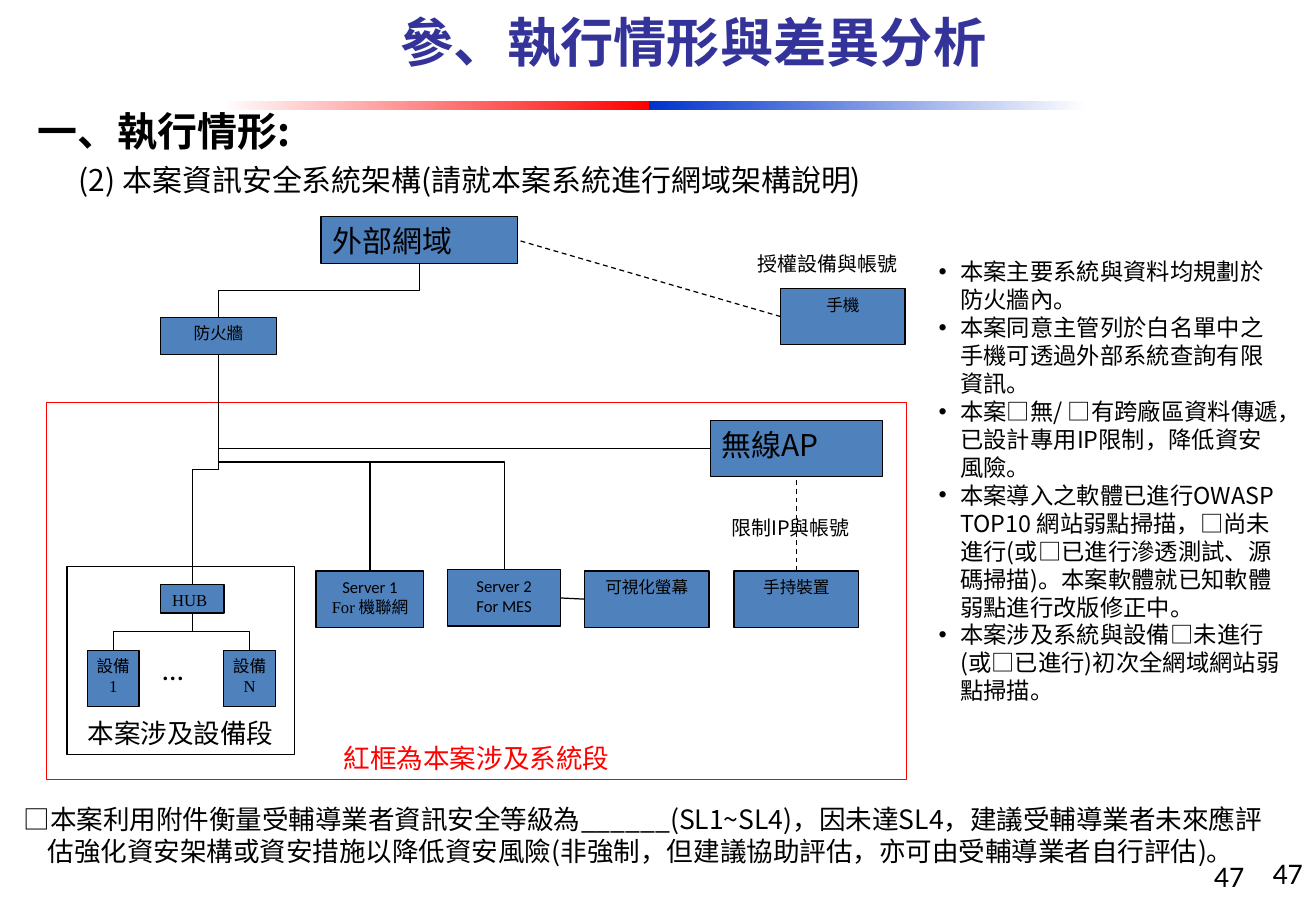
"""Build the slide on the information security architecture of the project."""
from lxml.etree import SubElement
from pptx import Presentation
from pptx.dml.color import RGBColor
from pptx.enum.dml import MSO_LINE
from pptx.enum.shapes import MSO_CONNECTOR, MSO_SHAPE
from pptx.enum.text import MSO_ANCHOR, PP_ALIGN
from pptx.oxml.ns import qn
from pptx.util import Pt

BLACK = RGBColor(0x00, 0x00, 0x00)
WHITE = RGBColor(0xFF, 0xFF, 0xFF)
RED = RGBColor(0xFF, 0x00, 0x00)
ROYAL = RGBColor(0x00, 0x33, 0xCC)
INDIGO = RGBColor(0x33, 0x33, 0x99)
STEEL = RGBColor(0x4F, 0x81, 0xBD)
NOTO, NOTO_TC = "Noto Sans CJK SC", "Noto Sans CJK TC"
CALIBRI, TIMES = "Calibri", "Times New Roman"


def write(shape, *paragraphs, size, font=NOTO, color=BLACK, bold=False,
          align=PP_ALIGN.LEFT, anchor=MSO_ANCHOR.TOP, wrap=True, hanging=0, bullet=None):
    """Fill a shape with paragraphs; each is a string or a list of (text, font) runs."""
    frame = shape.text_frame
    frame.word_wrap = wrap
    frame.vertical_anchor = anchor
    for index, content in enumerate(paragraphs):
        paragraph = frame.paragraphs[0] if index == 0 else frame.add_paragraph()
        paragraph.alignment = align
        properties = paragraph._p.get_or_add_pPr()
        if hanging:
            properties.set("marL", str(Pt(hanging)))
            properties.set("indent", str(-Pt(hanging)))
        if bullet:
            SubElement(properties, qn("a:buFont")).set("typeface", "Arial")
            SubElement(properties, qn("a:buChar")).set("char", bullet)
        for text, typeface in [(content, font)] if isinstance(content, str) else content:
            if text == "\n":
                paragraph.add_line_break()
                continue
            run = paragraph.add_run()
            run.text = text
            run.font.size = Pt(size)
            run.font.bold = bold
            run.font.color.rgb = color
            run.font.name = typeface
            east_asian = typeface if typeface == NOTO_TC else NOTO
            SubElement(run._r.get_or_add_rPr(), qn("a:ea")).set("typeface", east_asian)


def link(begin, end, begin_side=2, end_side=0, kind=MSO_CONNECTOR.ELBOW, dashed=False):
    """Join two boxes; an elbow from bottom to top is turned to leave downwards."""
    wire = slide.shapes.add_connector(kind, 0, 0, 0, 0)
    wire.begin_connect(begin, begin_side)
    wire.end_connect(end, end_side)
    wire.line.color.rgb = BLACK
    wire.line.width = Pt(0.75)
    if dashed:
        wire.line.dash_style = MSO_LINE.DASH
    properties = wire._element.spPr
    SubElement(properties, qn("a:effectLst"))
    if kind != MSO_CONNECTOR.ELBOW:
        return
    if (begin_side, end_side) == (1, 2):
        properties.find(qn("a:prstGeom")).set("prst", "bentConnector2")
        return
    x1, y1, x2, y2 = wire.begin_x, wire.begin_y, wire.end_x, wire.end_y
    run, drop = abs(x2 - x1), abs(y2 - y1)
    wire.left, wire.top = (x1 + x2 - drop) // 2, (y1 + y2 - run) // 2
    wire.width, wire.height = drop, run
    turn = properties.find(qn("a:xfrm"))
    turn.set("rot", "5400000")
    turn.set("flipH", "0")
    turn.set("flipV", "1" if x2 > x1 else "0")


deck = Presentation()
deck.slide_width, deck.slide_height = Pt(791.3), Pt(540)
slide = deck.slides.add_slide(deck.slide_layouts[5])

title = slide.shapes.title
title.left, title.top, title.width, title.height = Pt(152.6), Pt(0), Pt(529.2), Pt(49)
write(title, "參、執行情形與差異分析", size=32, color=INDIGO, bold=True,
      align=PP_ALIGN.CENTER, anchor=MSO_ANCHOR.MIDDLE)

for left, width, start, stop in [(133.2, 257, WHITE, RED), (390.2, 263.5, ROYAL, WHITE)]:
    band = slide.shapes.add_shape(MSO_SHAPE.RECTANGLE, Pt(left), Pt(60.5), Pt(width), Pt(5.8))
    band.shadow.inherit = False
    band.line.fill.background()
    band.fill.gradient()
    band.fill.gradient_angle = 0
    for gradient_stop, color in zip(band.fill.gradient_stops, (start, stop)):
        gradient_stop.color.rgb = color

CENTER = {"align": PP_ALIGN.CENTER}
LABEL = {"size": 16, "anchor": MSO_ANCHOR.BOTTOM, **CENTER}
SMALL = {"size": 10, "font": CALIBRI, **CENTER}
DEVICE = {"size": 10, "font": TIMES, **CENTER}
parts = {}
for part, place, fill, outline, lines, style in [
    ("devices", (40.3, 340.6, 136.8, 113), None, BLACK, ["本案涉及設備段"], LABEL),
    ("system", (28.1, 241.9, 517, 226.8), None, RED, ["紅框為本案涉及系統段"],
     {**LABEL, "color": RED}),
    ("device 1", (52.6, 391, 31, 33.8), STEEL, BLACK, ["設備", "1"], DEVICE),
    ("device N", (134.6, 391, 31, 33.8), STEEL, BLACK, ["設備", "N"], DEVICE),
    ("hub", (96.5, 351.4, 38.2, 17.3), STEEL, BLACK, ["HUB"], {"size": 10, "font": TIMES}),
    ("server 1", (190.1, 343.4, 64.8, 33.8), STEEL, BLACK,
     ["Server 1", [("For", TIMES), (" 機聯網", CALIBRI)]], SMALL),
    ("server 2", (269.3, 342.7, 67.7, 33.8), STEEL, BLACK,
     [[("Server 2", CALIBRI), ("\n", CALIBRI), ("For MES", CALIBRI)]], SMALL),
    ("firewall", (96.5, 190.8, 69.8, 22.3), STEEL, BLACK, ["防火牆"], SMALL),
    ("screen", (351.4, 343.4, 74.9, 33.8), STEEL, BLACK, ["可視化螢幕"], SMALL),
    ("phone", (469.4, 173.5, 74.9, 33.8), STEEL, BLACK, ["手機"], SMALL),
    ("handheld", (441.4, 343.4, 74.9, 33.8), STEEL, BLACK, ["手持裝置"], SMALL),
    ("wireless", (427, 252.7, 103.7, 33.8), STEEL, BLACK, ["無線AP"], {"size": 18}),
    ("external", (193, 130.3, 118.1, 28.1), STEEL, BLACK, ["外部網域"], {"size": 18}),
]:
    box = slide.shapes.add_shape(MSO_SHAPE.RECTANGLE, *map(Pt, place))
    box.shadow.inherit = False
    if fill is None:
        box.fill.background()
    else:
        box.fill.solid()
        box.fill.fore_color.rgb = fill
    box.line.color.rgb = outline
    box.line.width = Pt(0.75)
    write(box, *lines, wrap=False, **style)
    parts[part] = box

for upper, lower in [("external", "firewall"), ("firewall", "hub"), ("firewall", "server 1"),
                     ("firewall", "server 2"), ("hub", "device 1"), ("hub", "device N")]:
    link(parts[upper], parts[lower])
link(parts["wireless"], parts["firewall"], 1, 2)
link(parts["server 2"], parts["screen"], 3, 1, MSO_CONNECTOR.STRAIGHT)
link(parts["handheld"], parts["wireless"], 0, 2, MSO_CONNECTOR.STRAIGHT, dashed=True)
link(parts["phone"], parts["external"], 1, 3, MSO_CONNECTOR.STRAIGHT, dashed=True)

findings = [
    "本案主要系統與資料均規劃於防火牆內。",
    "本案同意主管列於白名單中之手機可透過外部系統查詢有限資訊。",
    [("本案", NOTO), ("□", NOTO_TC), ("無/", NOTO), (" □", NOTO_TC),
     ("有跨廠區資料傳遞，已設計專用IP限制，降低資安風險。", NOTO)],
    [("本案導入之軟體已進行OWASP TOP10 網站弱點掃描，", NOTO), ("□", NOTO_TC),
     ("尚未進行(或", NOTO), ("□", NOTO_TC),
     ("已進行滲透測試、源碼掃描)。本案軟體就已知軟體弱點進行改版修正中。", NOTO)],
    [("本案涉及系統與設備", NOTO),
     ("□未進行(或□已進行)初次全網域網站弱點掃描。", NOTO_TC)],
]
rating = ("□本案利用附件衡量受輔導業者資訊安全等級為______(SL1~SL4)，因未達SL4，"
          "建議受輔導業者未來應評估強化資安架構或資安措施以降低資安風險"
          "(非強制，但建議協助評估，亦可由受輔導業者自行評估)。")
for place, lines, style in [
    ((15.8, 60.5, 666.7, 36.7), ["一、執行情形:"], {"size": 24, "bold": True}),
    ((40.3, 93.6, 488.2, 28.8), ["(2) 本案資訊安全系統架構(請就本案系統進行網域架構說明)"],
     {"size": 18}),
    ((90.7, 387.4, 35.3, 28.8), ["…"], {"size": 18, "font": CALIBRI}),
    ((7.2, 479.5, 763.2, 46), [rating], {"size": 16, "hanging": 14.4}),
    ((557.3, 151.2, 222.5, 278.6), findings, {"size": 14, "hanging": 13, "bullet": "•"}),
    ((448.6, 147.6, 123.8, 21.6), ["授權設備與帳號"], {"size": 12}),
    ((432.7, 306.7, 95.8, 21.6), ["限制IP與帳號"], {"size": 12}),
    ((638.6, 510.5, 151.9, 29.5), ["47"],
     {"size": 18, "font": CALIBRI, "align": PP_ALIGN.RIGHT}),
    ((722.9, 511.9, 67.7, 28.1), ["47"], {"size": 18, "font": CALIBRI}),
]:
    write(slide.shapes.add_textbox(*map(Pt, place)), *lines, **style)

deck.save("out.pptx")
